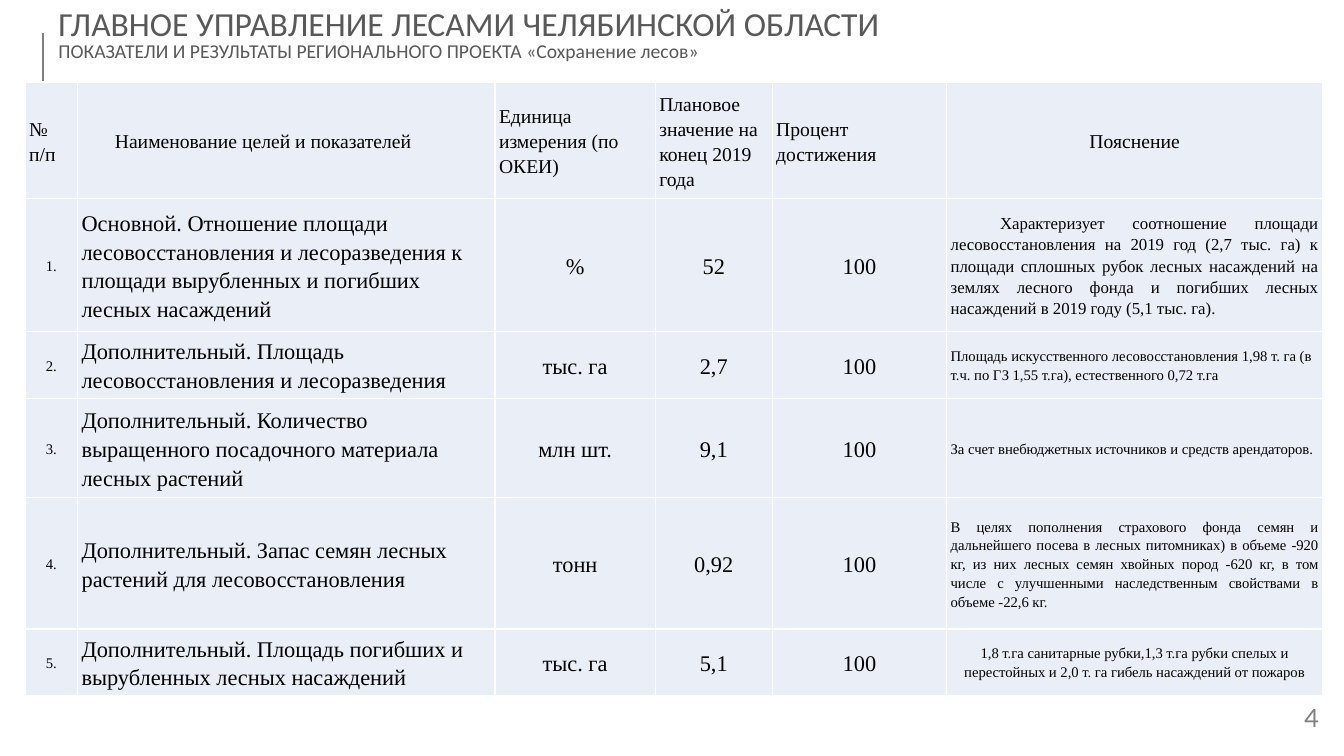
import pptx
import pptx.util
import pptx.dml.color
import pptx.enum.shapes
import pptx.enum.text
import pptx.oxml
import pptx.oxml.ns
from dataclasses import dataclass

Inch = pptx.util.Inches
Align = pptx.enum.text.PP_ALIGN
Mid = pptx.enum.text.MSO_ANCHOR.MIDDLE
Top = pptx.enum.text.MSO_ANCHOR.TOP
Left, Mean, Just = Align.LEFT, Align.CENTER, Align.JUSTIFY


@dataclass(frozen=True)
class Theme:
    head: str = "Calibri"
    body: str = "Times New Roman"
    page: str = "Lato"
    ink: str = "000000"
    dark: str = "595959"
    gray: str = "808080"
    pale: str = "EAEFF7"
    white: str = "FFFFFF"
    title: float = 24
    label: float = 14
    main: float = 16
    note: float = 12
    small: float = 10.5
    folio: float = 18


T = Theme()
WIDE, HIGH = 13.33, 7.5

COLS = (0.52, 4.14, 1.59, 1.16, 1.73, 3.73)
ROWS = (1.15, 1.32, 0.66, 0.99, 1.3, 0.66)

LABELS = (
    "№ п/п",
    "Наименование целей и показателей",
    "Единица измерения (по ОКЕИ)",
    "Плановое значение на конец 2019 года",
    "Процент достижения",
    "Пояснение",
)

# Goal, unit, plan, percent, note, then the note's size, alignment and indent
GOALS = (
    ("Основной. Отношение площади лесовосстановления и лесоразведения к "
     "площади вырубленных и погибших лесных насаждений", "%", "52", "100",
     "Характеризует соотношение площади лесовосстановления на 2019 год "
     "(2,7 тыс. га) к площади сплошных рубок лесных насаждений на землях "
     "лесного фонда и погибших лесных насаждений в 2019 году (5,1 тыс. га).",
     T.note, Just, 0.49),
    ("Дополнительный. Площадь лесовосстановления и лесоразведения",
     "тыс. га", "2,7", "100",
     "Площадь искусственного лесовосстановления 1,98 т. га (в т.ч. по ГЗ "
     "1,55 т.га), естественного 0,72 т.га", T.small, Left, 0),
    ("Дополнительный. Количество выращенного посадочного материала лесных "
     "растений", "млн шт.", "9,1", "100",
     "За счет внебюджетных источников и средств арендаторов.",
     T.small, Just, 0),
    ("Дополнительный. Запас семян лесных растений для лесовосстановления",
     "тонн", "0,92", "100",
     "В целях пополнения страхового фонда семян и дальнейшего посева в лесных "
     "питомниках) в объеме -920 кг, из них лесных семян хвойных пород -620 кг, "
     "в том числе с улучшенными наследственным свойствами в объеме -22,6 кг.",
     T.small, Just, 0),
    ("Дополнительный. Площадь погибших и вырубленных лесных насаждений",
     "тыс. га", "5,1", "100",
     "1,8 т.га санитарные рубки,1,3 т.га рубки спелых и перестойных и 2,0 т. га "
     "гибель насаждений от пожаров", T.small, Mean, 0),
)


def color(code):
    return pptx.dml.color.RGBColor.from_string(code)


def write(para, text, font, size, tone, align=Left, lead=1.15, dent=0):
    para.text = text
    para.alignment, para.line_spacing = align, lead
    para.space_before = para.space_after = pptx.util.Pt(0)
    para.font.name, para.font.size = font, pptx.util.Pt(size)
    para.font.color.rgb = color(tone)
    if dent:
        para._p.get_or_add_pPr().set("indent", str(Inch(dent)))


def frame(text, anchor):
    text.word_wrap = True
    text.auto_size = pptx.enum.text.MSO_AUTO_SIZE.NONE
    text.vertical_anchor = anchor
    text.margin_left = text.margin_right = 0
    text.margin_top = text.margin_bottom = 0


# Heading: title, subtitle and the upright rule beside them
def head(slide, x, y, w, h):
    title = slide.shapes.title
    title.left, title.top = Inch(x + 0.15), Inch(y)
    title.width, title.height = Inch(w - 0.15), Inch(h)
    text = title.text_frame
    frame(text, Top)
    write(text.paragraphs[0], "ГЛАВНОЕ УПРАВЛЕНИЕ ЛЕСАМИ ЧЕЛЯБИНСКОЙ ОБЛАСТИ",
          T.head, T.title, T.dark, lead=0.8)
    write(text.add_paragraph(),
          "ПОКАЗАТЕЛИ И РЕЗУЛЬТАТЫ РЕГИОНАЛЬНОГО ПРОЕКТА «Сохранение лесов»",
          T.head, T.label, T.dark, lead=0.8)
    rule = slide.shapes.add_connector(
        pptx.enum.shapes.MSO_CONNECTOR.STRAIGHT,
        Inch(x), Inch(y + 0.22), Inch(x), Inch(y + h))
    rule.line.color.rgb = color(T.gray)
    rule.line.width = pptx.util.Pt(1.5)
    rule._element.spPr.append(pptx.oxml.parse_xml(
        f'<a:effectLst {pptx.oxml.ns.nsdecls("a")}/>'))


# One table cell with white edges and a pale fill
def fill(cell, text, size, align=Left, dent=0):
    props = cell._tc.get_or_add_tcPr()
    for side in "LRTB":
        props.append(pptx.oxml.parse_xml(
            f'<a:ln{side} {pptx.oxml.ns.nsdecls("a")} w="12700"><a:solidFill>'
            f'<a:srgbClr val="{T.white}"/></a:solidFill></a:ln{side}>'))
    cell.fill.solid()
    cell.fill.fore_color.rgb = color(T.pale)
    cell.vertical_anchor = Mid
    cell.margin_left = cell.margin_right = Inch(0.04)
    cell.margin_top = cell.margin_bottom = 0
    write(cell.text_frame.paragraphs[0], text, T.body, size, T.ink, align,
          dent=dent)


# Table of goals, its columns and rows scaled to the box
def grid(slide, x, y, w, h):
    table = slide.shapes.add_table(
        len(ROWS), len(COLS), Inch(x), Inch(y), Inch(w), Inch(h)).table
    table.first_row = table.horz_banding = False
    for col, size in zip(table.columns, COLS):
        col.width = Inch(w * size / sum(COLS))
    for row, size in zip(table.rows, ROWS):
        row.height = Inch(h * size / sum(ROWS))

    for c, label in enumerate(LABELS):
        fill(table.cell(0, c), label, T.label,
             Mean if c == len(LABELS) - 1 else Left, 0.33 if c == 1 else 0)
    for r, (goal, *facts, note, size, align, dent) in enumerate(GOALS, 1):
        fill(table.cell(r, 0), f"{r}.", T.small, Mean)
        fill(table.cell(r, 1), goal, T.main)
        for c, fact in enumerate(facts, 2):
            fill(table.cell(r, c), fact, T.main, Mean)
        fill(table.cell(r, 5), note, size, align, dent)


# Page number
def foot(slide, x, y, w, h):
    box = slide.shapes.add_textbox(Inch(x), Inch(y), Inch(w), Inch(h))
    frame(box.text_frame, Mid)
    write(box.text_frame.paragraphs[0], "4", T.page, T.folio, T.gray, Mean, 0.8)


def main():
    deck = pptx.Presentation()
    deck.slide_width, deck.slide_height = Inch(WIDE), Inch(HIGH)
    slide = deck.slides.add_slide(deck.slide_layouts[5])
    head(slide, 0.43, 0.11, WIDE - 0.86, 0.69)
    grid(slide, 0.25, 0.82, sum(COLS), sum(ROWS))
    foot(slide, WIDE - 0.64, 6.9, 0.64, 0.5)
    deck.save("out.pptx")


if __name__ == "__main__":
    main()
